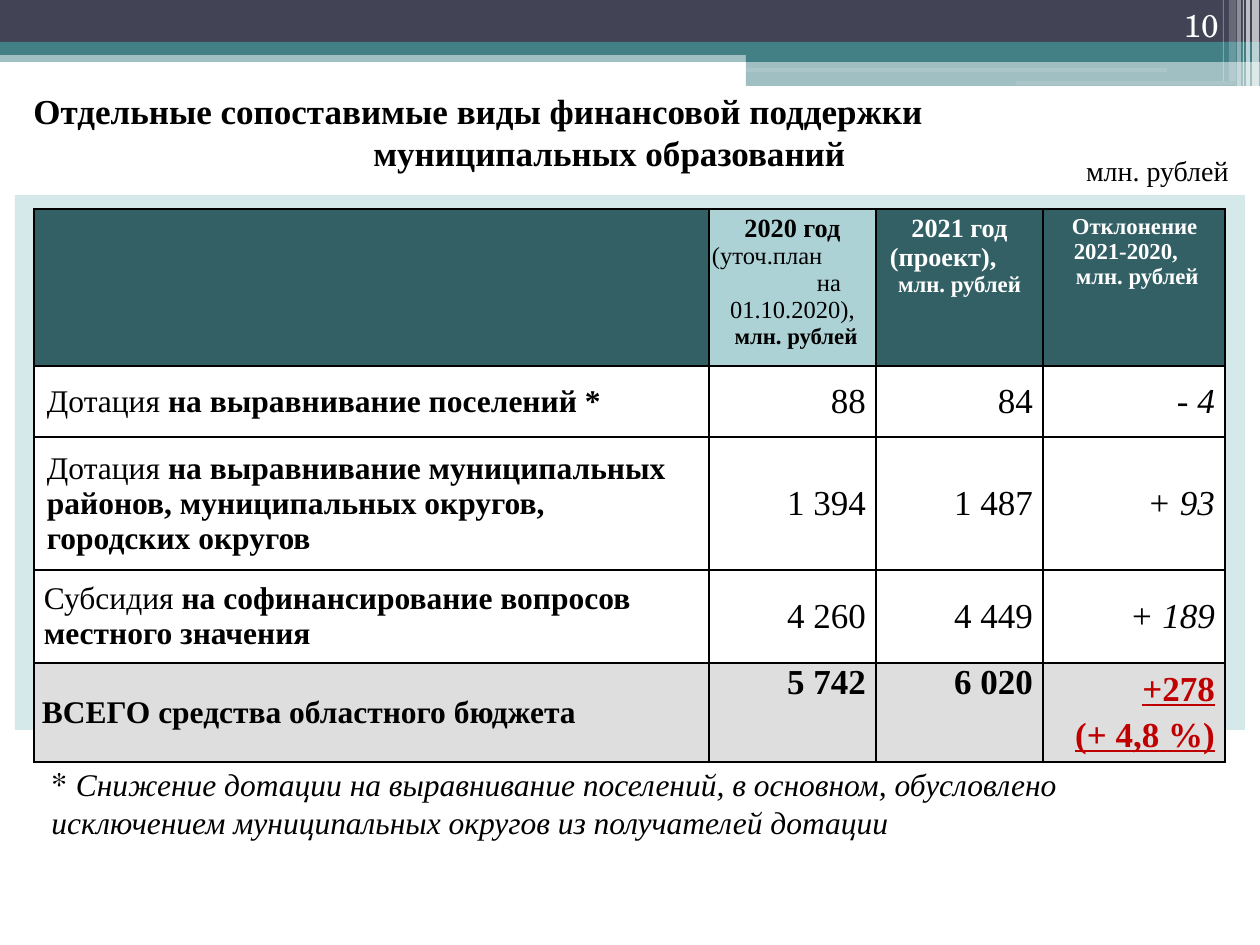
from lxml import etree
from pptx import Presentation
from pptx.dml.color import RGBColor
from pptx.enum.shapes import MSO_SHAPE
from pptx.enum.text import MSO_ANCHOR, PP_ALIGN
from pptx.oxml.ns import qn
from pptx.util import Emu, Pt

PX = 914400 / 126
RECT, ROUND = MSO_SHAPE.RECTANGLE, MSO_SHAPE.ROUNDED_RECTANGLE
LEFT, CENTER, RIGHT = PP_ALIGN.LEFT, PP_ALIGN.CENTER, PP_ALIGN.RIGHT
TOP, MIDDLE, BOTTOM = MSO_ANCHOR.TOP, MSO_ANCHOR.MIDDLE, MSO_ANCHOR.BOTTOM
SERIF, SCHOLA = "Times New Roman", "TeX Gyre Schola"
BLACK = RGBColor(0x00, 0x00, 0x00)
WHITE = RGBColor(0xFF, 0xFF, 0xFF)
SLATE = RGBColor(0x42, 0x44, 0x56)
TEAL = RGBColor(0x43, 0x80, 0x86)
DARK_TEAL = RGBColor(0x32, 0x60, 0x65)
LIGHT_TEAL = RGBColor(0xAD, 0xD2, 0xD6)
PALE_TEAL = RGBColor(0xD6, 0xE9, 0xEA)
GREY = RGBColor(0xDE, 0xDE, 0xDE)
RED = RGBColor(0xC0, 0x00, 0x00)

COLUMNS = (675, 167, 167, 182)
ROWS = (153, 71, 133, 93, 99)
BODY = (
    ("Дотация ", "на выравнивание поселений *", "88", "84", "- 4"),
    ("Дотация ", "на выравнивание муниципальных районов, муниципальных округов, "
     "городских округов", "1 394", "1 487", "+ 93"),
    ("Субсидия ", "на софинансирование вопросов местного значения",
     "4 260", "4 449", "+ 189"),
)


def px(value):
    """Turn pixels into EMU."""
    return Emu(round(value * PX))


def add_block(page, box, color, opacity=100, kind=RECT):
    """Add a plain filled shape without outline."""
    block = page.shapes.add_shape(kind, *map(px, box))
    block.shadow.inherit = False
    block.fill.solid()
    block.fill.fore_color.rgb = color
    block.line.fill.background()
    if opacity < 100:
        tint = block._element.spPr.find(qn("a:solidFill")).find(qn("a:srgbClr"))
        etree.SubElement(tint, qn("a:alpha")).set("val", str(opacity * 1000))


def span(text, size, bold=False, italic=False, color=BLACK, face=SERIF, underline=False):
    """Describe one formatted run."""
    return text, size, bold, italic, color, face, underline


def write(frame, paras, align=LEFT, before=0):
    """Fill a text frame from (spans, align, indent) tuples or lists of spans."""
    for index, entry in enumerate(paras):
        spans, side, indent = entry if isinstance(entry, tuple) else (entry, align, 0)
        para = frame.paragraphs[0] if index == 0 else frame.add_paragraph()
        para.alignment = side
        para.space_before = Pt(before)
        if indent:
            para._p.get_or_add_pPr().set("marL", str(px(indent)))
        for text, size, bold, italic, color, face, underline in spans:
            run = para.add_run()
            run.text = text
            font = run.font
            font.size, font.bold, font.italic = Pt(size), bold, italic
            font.name, font.color.rgb, font.underline = face, color, underline


def add_text(page, box, paras, align=LEFT, anchor=TOP):
    """Add a wrapping text box."""
    frame = page.shapes.add_textbox(*map(px, box)).text_frame
    frame.word_wrap = True
    frame.vertical_anchor = anchor
    write(frame, paras, align)
    return frame


def add_banner(page, left, top, width):
    """Draw the layered band across the top with its page number."""
    bars = (
        (0, 50, width, 12, TEAL, 50), (0, 0, width, 42, SLATE),
        (0, 42, width, 13, TEAL), (746, 49, 514, 13, TEAL),
        (746, 61, 514, 25, TEAL, 50),
        (745, 68, 422, 4, WHITE, 11, ROUND), (1016, 81, 220, 4, WHITE, 11, ROUND),
        (1252, 0, 7, 86, WHITE, 65), (1246, 0, 4, 86, WHITE, 65),
        (1243, 0, 1, 86, WHITE, 60), (1237, 0, 4, 86, WHITE, 40),
        (1229, 0, 7, 81, WHITE, 20), (1223, 0, 1, 81, WHITE, 30),
    )
    for x, y, wide, high, *look in bars:
        add_block(page, (left + x, top + y, wide, high), *look)
    number = [span("10", 18, color=WHITE, face=SCHOLA)]
    add_text(page, (left + 1126, top, 105, 50), [number], RIGHT, BOTTOM)


def add_heading(page, left, top, width):
    """Place the two-line title and the unit label."""
    lines = (("Отдельные сопоставимые виды финансовой поддержки", 41),
             ("муниципальных образований", 381))
    paras = [([span(text, 20, True)], LEFT, indent) for text, indent in lines]
    frame = add_text(page, (left, top, width, 67), paras, anchor=MIDDLE)
    for para in frame.paragraphs:
        para.line_spacing = Pt(24)
    add_text(page, (left + 1044, top + 49, 217, 47), [[span("млн. рублей", 16)]], RIGHT)


def fill_cell(cell, color, paras=(), align=LEFT, anchor=MIDDLE, insets=(13, 6, 10, 6), before=0):
    """Give a cell its borders, fill, margins and text."""
    props = cell._tc.get_or_add_tcPr()
    for side in ("lnL", "lnR", "lnT", "lnB"):
        line = etree.SubElement(props, qn("a:" + side), w=str(Pt(1)))
        paint = etree.SubElement(line, qn("a:solidFill"))
        etree.SubElement(paint, qn("a:srgbClr"), val=str(BLACK))
    cell.fill.solid()
    cell.fill.fore_color.rgb = color
    cell.vertical_anchor = anchor
    cell.margin_left, cell.margin_top, cell.margin_right, cell.margin_bottom = map(px, insets)
    write(cell.text_frame, paras, align, before)


def fill_header(table):
    """Write the column headings."""
    plan = [
        [span("2020 год", 15, True)],
        ([span("(уточ.план", 14)], LEFT, 0),
        ([span("на", 14)], LEFT, 105),
        [span("01.10.2020),", 14)],
        ([span("млн. рублей", 13, True)], CENTER, 7),
    ]
    project = [
        [span("2021 год", 15, True, color=WHITE)],
        ([span("(проект),", 15, True, color=WHITE)], LEFT, 11),
        [span("млн. рублей", 13, True, color=WHITE)],
    ]
    change = [([span(text, 13, True, color=WHITE)], LEFT, indent) for text, indent in
              (("Отклонение", 26), ("2021-2020,", 28), ("млн. рублей", 30))]
    heads = ((DARK_TEAL, ()), (LIGHT_TEAL, plan), (DARK_TEAL, project), (DARK_TEAL, change))
    for column, (color, paras) in enumerate(heads):
        fill_cell(table.cell(0, column), color, paras, CENTER, TOP, (3, 5, 3, 5))


def fill_total(table, row):
    """Write the grand total row."""
    label = [span("ВСЕГО средства областного бюджета", 18, True)]
    fill_cell(table.cell(row, 0), GREY, [label], insets=(8, 0, 0, 0))
    for column, text in enumerate(("5 742", "6 020"), 1):
        fill_cell(table.cell(row, column), GREY, [[span(text, 20, True)]],
                  RIGHT, TOP, (0, 0, 10, 0))
    growth = [[span(text, 20, True, color=RED, underline=True)]
              for text in ("+278", "(+ 4,8 %)")]
    fill_cell(table.cell(row, 3), GREY, growth, RIGHT, insets=(0, 0, 10, 0), before=4)


def add_support_table(page, left, top):
    """Build the table of support by kind and year."""
    box = (left, top, sum(COLUMNS), sum(ROWS))
    table = page.shapes.add_table(len(ROWS), len(COLUMNS), *map(px, box)).table
    table.first_row = table.horz_banding = False
    for column, width in zip(table.columns, COLUMNS):
        column.width = px(width)
    for row, height in zip(table.rows, ROWS):
        row.height = px(height)
    fill_header(table)
    for row, (kind, purpose, *values) in enumerate(BODY, 1):
        label = [span(kind, 18), span(purpose, 18, True)]
        start = 10 if row == len(BODY) else 13
        fill_cell(table.cell(row, 0), WHITE, [label], insets=(start, 6, 13, 6))
        for column, value in enumerate(values, 1):
            number = [span(value, 20, italic=column == len(values))]
            fill_cell(table.cell(row, column), WHITE, [number], RIGHT)
    fill_total(table, len(ROWS) - 1)


def add_footnote(page, box):
    """Place the remark below the table."""
    remark = ("Снижение дотации на выравнивание поселений, в основном, обусловлено "
              "исключением муниципальных округов из получателей дотации")
    add_text(page, box, [[span("* ", 18, face=SCHOLA), span(remark, 18, italic=True)]])


def main():
    """Build and save the deck."""
    deck = Presentation()
    deck.slide_width, deck.slide_height = px(1260), px(945)
    page = deck.slides.add_slide(deck.slide_layouts[6])
    add_banner(page, 0, 0, 1260)
    add_block(page, (15, 195, 1230, 535), PALE_TEAL)
    add_heading(page, -20, 98, 1260)
    add_support_table(page, 34, 209)
    add_footnote(page, (39, 759, 1172, 89))
    deck.save("out.pptx")


if __name__ == "__main__":
    main()
